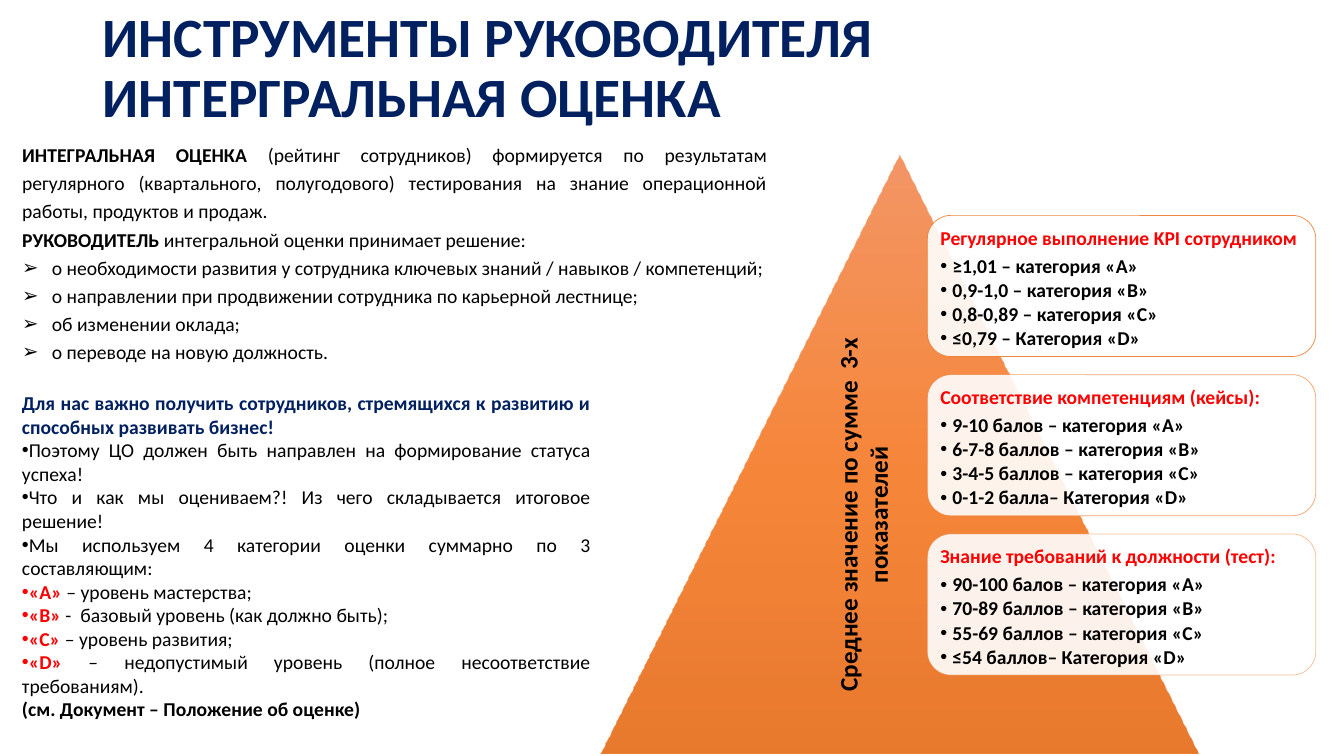
from dataclasses import dataclass

from lxml import etree
from pptx import Presentation
from pptx.dml.color import RGBColor
from pptx.enum.shapes import MSO_SHAPE
from pptx.enum.text import MSO_ANCHOR, MSO_AUTO_SIZE, PP_ALIGN
from pptx.oxml.ns import qn
from pptx.util import Inches, Pt

LEFT, CENTER, JUSTIFY = PP_ALIGN.LEFT, PP_ALIGN.CENTER, PP_ALIGN.JUSTIFY
TOP, MIDDLE = MSO_ANCHOR.TOP, MSO_ANCHOR.MIDDLE
NO_AUTOFIT = MSO_AUTO_SIZE.NONE
TRIANGLE, ROUNDED = MSO_SHAPE.ISOSCELES_TRIANGLE, MSO_SHAPE.ROUNDED_RECTANGLE

SLIDE_W, SLIDE_H = Inches(13.33), Inches(7.5)
COL, ROW = SLIDE_W / 100, SLIDE_H / 100


@dataclass(frozen=True)
class Theme:
    font: str = "Calibri"
    navy: str = "002060"
    red: str = "FF0000"
    ink: str = "000000"
    card: str = "FFFFFF"
    edge: str = "ED7D31"
    pyramid: tuple = ((0, "F18C57"), (50, "F67B28"), (100, "E56C19"))
    opacity: int = 90
    title: float = 39.6
    label: float = 18
    body: float = 14


THEME = Theme()


@dataclass(frozen=True)
class Box:
    """Area in hundredths of the slide's width and height."""
    x: float
    y: float
    w: float
    h: float

    def emu(self):
        return (round(self.x * COL), round(self.y * ROW),
                round(self.w * COL), round(self.h * ROW))


def place(shape, box):
    shape.left, shape.top, shape.width, shape.height = box.emu()
    return shape


def set_opacity(fill, percent):
    color = fill._xPr.find(qn("a:solidFill"))[0]
    etree.SubElement(color, qn("a:alpha"), val=str(percent * 1000))


def prepare_frame(shape, anchor=TOP, inset=None):
    frame = shape.text_frame
    frame.word_wrap = True
    frame.auto_size = NO_AUTOFIT
    frame.vertical_anchor = anchor
    if inset is not None:
        frame.margin_left = frame.margin_right = Inches(inset)
        frame.margin_top = frame.margin_bottom = Inches(inset)
    return frame


def write(frame, *runs, size=THEME.body, color=THEME.ink, bold=False, align=LEFT,
          spacing=1.0, after=0, bullet=None, margin=0, indent=0):
    """Add a paragraph; a run is text or (text, {"color", "bold"})."""
    first = frame.paragraphs[0]
    paragraph = frame.add_paragraph() if first.runs else first
    paragraph.alignment, paragraph.line_spacing = align, spacing
    paragraph.space_before, paragraph.space_after = Pt(0), Pt(after)
    props = paragraph._p.get_or_add_pPr()
    props.set("marL", str(Inches(margin)))
    props.set("indent", str(Inches(indent)))
    if bullet:
        etree.SubElement(props, qn("a:buFont"), typeface="Arial")
        etree.SubElement(props, qn("a:buChar"), char=bullet)
    else:
        etree.SubElement(props, qn("a:buNone"))
    for item in runs:
        text, style = (item, {}) if isinstance(item, str) else item
        for number, line in enumerate(text.split("\n")):
            if number:
                paragraph.add_line_break()
            run = paragraph.add_run()
            run.text = line
            run.font.name, run.font.size = THEME.font, Pt(size)
            run.font.bold = style.get("bold", bold)
            run.font.color.rgb = RGBColor.from_string(style.get("color", color))


def add_title(slide, box):
    frame = prepare_frame(place(slide.shapes.title, box), MIDDLE)
    write(frame, "ИНСТРУМЕНТЫ РУКОВОДИТЕЛЯ\nИНТЕРГРАЛЬНАЯ ОЦЕНКА",
          size=THEME.title, color=THEME.navy, bold=True, spacing=0.9)


def add_purpose(slide, box):
    frame = prepare_frame(place(slide.placeholders[1], box))
    strong = {"bold": True}
    layout = {"align": JUSTIFY, "spacing": 1.2}
    write(frame, ("ИНТЕГРАЛЬНАЯ ОЦЕНКА ", strong),
          "(рейтинг сотрудников) формируется по результатам регулярного "
          "(квартального, полугодового) тестирования на знание операционной "
          "работы, продуктов и продаж.", **layout)
    write(frame, ("РУКОВОДИТЕЛЬ", strong),
          " интегральной оценки принимает решение:", **layout)
    for decision in (
            " о необходимости развития у сотрудника ключевых знаний / навыков / компетенций;",
            " о направлении при продвижении сотрудника по карьерной лестнице;",
            " об изменении оклада;",
            " о переводе на новую должность."):
        write(frame, decision, bullet="➢", margin=0.25, indent=-0.25, **layout)


def add_pyramid(slide, box):
    pyramid = slide.shapes.add_shape(TRIANGLE, *box.emu())
    pyramid.shadow.inherit = False
    pyramid.line.fill.background()
    pyramid.fill.gradient()
    pyramid.fill.gradient_angle = 270
    stops = pyramid.fill._xPr.find(qn("a:gradFill")).find(qn("a:gsLst"))
    for stop in list(stops):
        stops.remove(stop)
    for position, color in THEME.pyramid:
        stop = etree.SubElement(stops, qn("a:gs"), pos=str(position * 1000))
        tone = etree.SubElement(stop, qn("a:srgbClr"), val=color)
        etree.SubElement(tone, qn("a:alpha"), val=str(THEME.opacity * 1000))


def add_card(slide, box, heading, grades, edge_opacity):
    card = slide.shapes.add_shape(ROUNDED, *box.emu())
    card.shadow.inherit = False
    card.fill.solid()
    card.fill.fore_color.rgb = RGBColor.from_string(THEME.card)
    set_opacity(card.fill, THEME.opacity)
    card.line.width = Pt(0.5)
    card.line.color.rgb = RGBColor.from_string(THEME.edge)
    set_opacity(card.line.fill, edge_opacity)
    frame = prepare_frame(card, inset=0.06)
    write(frame, heading, color=THEME.red, bold=True, spacing=0.9, after=4.9)
    for grade in grades:
        write(frame, grade, bold=True, spacing=0.9, after=2.1,
              bullet="•", margin=0.12, indent=-0.12)


def add_cards(slide, box):
    """Stack the three indicators at an equal pitch down the box."""
    cards = (
        ("Регулярное выполнение KPI сотрудником",
         ("≥1,01 – категория «А»", "0,9-1,0 – категория «В»",
          "0,8-0,89 – категория «С»", "≤0,79 – Категория «D»"), 90),
        ("Соответствие компетенциям (кейсы):",
         ("9-10 балов – категория «А»", "6-7-8 баллов – категория «В»",
          "3-4-5 баллов – категория «С»", "0-1-2 балла– Категория «D»"), 70),
        ("Знание требований к должности (тест):",
         ("90-100 балов – категория «А»", "70-89 баллов – категория «В»",
          "55-69 баллов – категория «С»", "≤54 баллов– Категория «D»"), 50))
    gap = 2.4
    height = (box.h - gap * (len(cards) - 1)) / len(cards)
    for index, card in enumerate(cards):
        add_card(slide, Box(box.x, box.y + index * (height + gap), box.w, height), *card)


def add_pyramid_label(slide, box):
    label = slide.shapes.add_textbox(*box.emu())
    label.rotation = 270
    write(prepare_frame(label), "Среднее значение по сумме  3-х показателей",
          size=THEME.label, bold=True, align=CENTER)


def add_categories(slide, box):
    frame = prepare_frame(slide.shapes.add_textbox(*box.emu()))
    grade = {"color": THEME.red, "bold": True}
    write(frame, "Для нас важно получить сотрудников, стремящихся к развитию "
          "и способных развивать бизнес!", color=THEME.navy, bold=True, align=JUSTIFY)
    for runs in (
            ("Поэтому ЦО должен быть направлен на формирование статуса успеха!",),
            ("Что и как мы оцениваем?! Из чего складывается итоговое решение!",),
            ("Мы используем 4 категории оценки суммарно по 3 составляющим:",),
            (("«А»", grade), " – уровень мастерства;"),
            (("«В»", grade), " -  базовый уровень (как должно быть);"),
            (("«С» ", grade), "– уровень развития;"),
            (("«D»", grade), " – недопустимый уровень (полное несоответствие требованиям).")):
        write(frame, *runs, align=JUSTIFY, bullet="•", indent=-0.25)
    write(frame, "(см. Документ – Положение об оценке)", bold=True, align=JUSTIFY)


def main():
    deck = Presentation()
    deck.slide_width, deck.slide_height = SLIDE_W, SLIDE_H
    slide = deck.slides.add_slide(deck.slide_layouts[1])
    add_title(slide, Box(6.9, 2.5, 86.25, 13.5))
    add_purpose(slide, Box(0.9, 17.6, 56.95, 30.5))
    add_pyramid(slide, Box(44.7, 20.5, 44.5, 79.1))
    add_cards(slide, Box(69, 28.5, 28.9, 60.8))
    add_pyramid_label(slide, Box(49, 63.35, 30.45, 9.45))
    add_categories(slide, Box(0.9, 51.1, 43.8, 46.5))
    deck.save("out.pptx")


if __name__ == "__main__":
    main()
